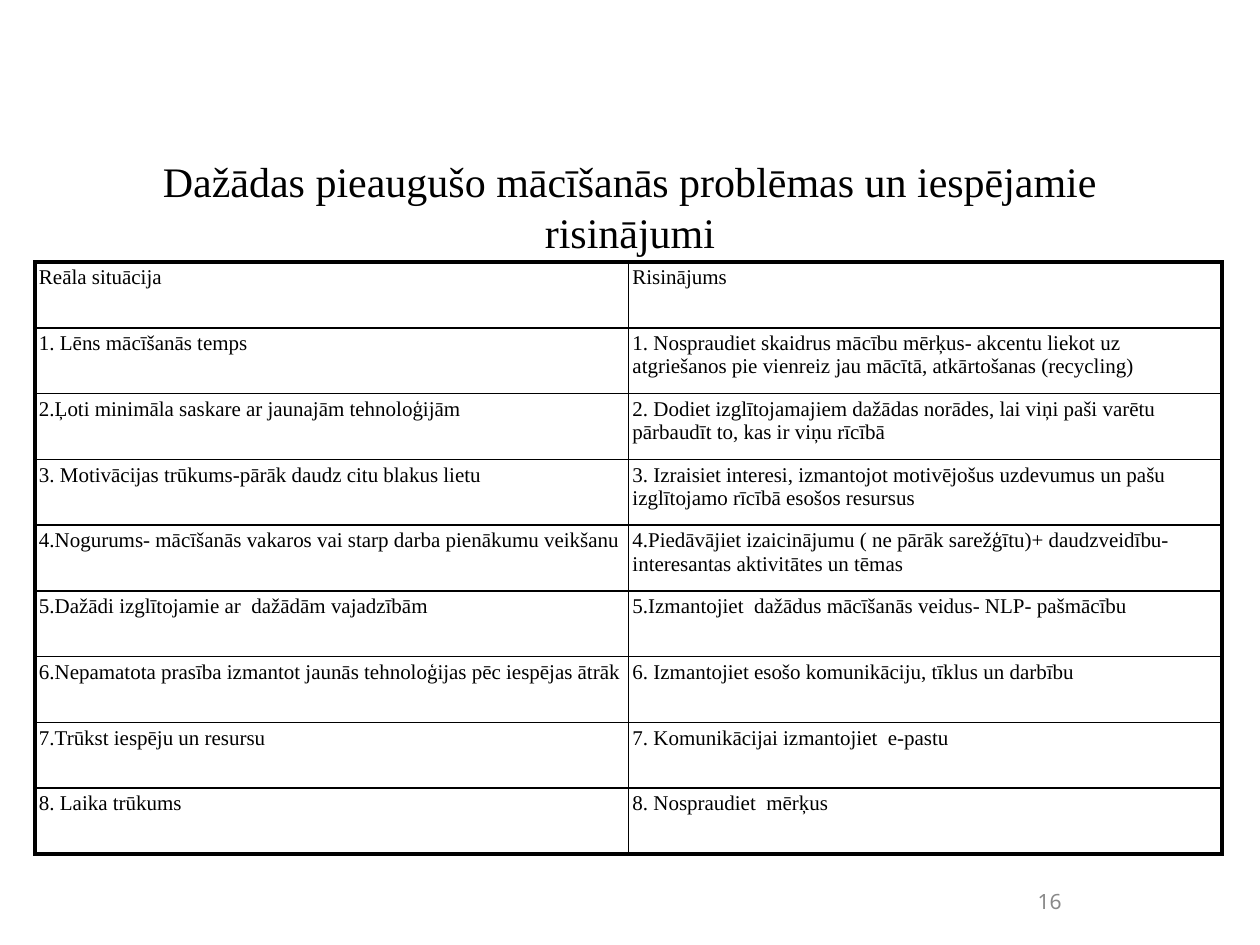
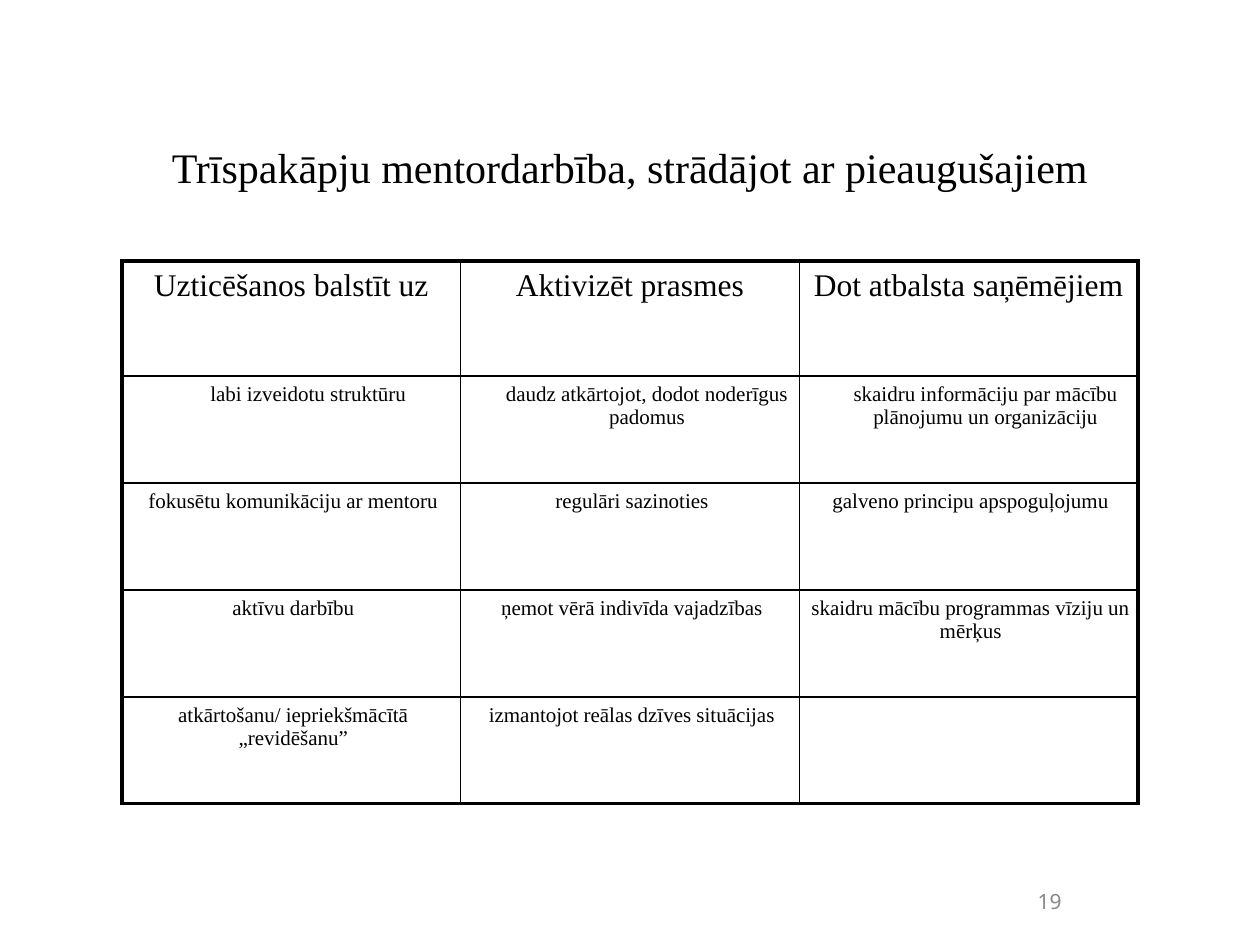
from lxml import etree
from pptx import Presentation
from pptx.dml.color import RGBColor
from pptx.enum.text import MSO_ANCHOR, MSO_AUTO_SIZE, PP_ALIGN
from pptx.oxml.ns import qn
from pptx.util import Emu, Pt

PX_PER_INCH = 126
COLORS = {"ink": "000000", "number": "898989"}
SERIF, SANS = "Times New Roman", "Noto Sans"
LEFT, CENTER = PP_ALIGN.LEFT, PP_ALIGN.CENTER
TOP, MIDDLE = MSO_ANCHOR.TOP, MSO_ANCHOR.MIDDLE
NO_AUTOFIT = MSO_AUTO_SIZE.NONE
OUTER, INNER = 2.25, 1
TITLE_ONLY = 5

PROBLEMS = [
    ("Reāla situācija", "Risinājums"),
    ("1. Lēns mācīšanās temps",
     "1. Nospraudiet skaidrus mācību mērķus- akcentu liekot uz atgriešanos pie "
     "vienreiz jau mācītā, atkārtošanas (recycling)"),
    ("2.Ļoti minimāla saskare ar jaunajām tehnoloģijām",
     "2. Dodiet izglītojamajiem dažādas norādes, lai viņi paši varētu pārbaudīt to, "
     "kas ir viņu rīcībā"),
    ("3. Motivācijas trūkums-pārāk daudz citu blakus lietu",
     "3. Izraisiet interesi, izmantojot motivējošus uzdevumus un pašu izglītojamo "
     "rīcībā esošos resursus"),
    ("4.Nogurums- mācīšanās vakaros vai starp darba pienākumu veikšanu",
     "4.Piedāvājiet izaicinājumu ( ne pārāk sarežģītu)+ daudzveidību- interesantas "
     "aktivitātes un tēmas"),
    ("5.Dažādi izglītojamie ar  dažādām vajadzībām",
     "5.Izmantojiet  dažādus mācīšanās veidus- NLP- pašmācību"),
    ("6.Nepamatota prasība izmantot jaunās tehnoloģijas pēc iespējas ātrāk",
     "6. Izmantojiet esošo komunikāciju, tīklus un darbību"),
    ("7.Trūkst iespēju un resursu", "7. Komunikācijai izmantojiet  e-pastu"),
    ("8. Laika trūkums", "8. Nospraudiet  mērķus"),
]
MENTORING = [
    ("Uzticēšanos balstīt uz", "Aktivizēt prasmes", "Dot atbalsta saņēmējiem"),
    ("labi izveidotu struktūru", "daudz atkārtojot, dodot noderīgus padomus",
     "skaidru informāciju par mācību plānojumu un organizāciju"),
    ("fokusētu komunikāciju ar mentoru", "regulāri sazinoties",
     "galveno principu apspoguļojumu"),
    ("aktīvu darbību", "ņemot vērā indivīda vajadzības",
     "skaidru mācību programmas vīziju un mērķus"),
    ("atkārtošanu/ iepriekšmācītā „revidēšanu”",
     "izmantojot reālas dzīves situācijas", ""),
]


def px(n):
    """Turn pixels into EMU."""
    return Emu(round(n * 914400 / PX_PER_INCH))


def style(p, size, font=SERIF, color="ink", align=CENTER):
    """Format one paragraph."""
    p.alignment = align
    p.font.size = Pt(size)
    p.font.name = font
    p.font.color.rgb = RGBColor.from_string(COLORS[color])


def set_margins(target, margin):
    """Give a text frame or cell the same margin on all sides."""
    target.margin_left = target.margin_right = px(margin)
    target.margin_top = target.margin_bottom = px(margin)


def add_title(s, text, box):
    """Move and format the title placeholder."""
    sp = s.shapes.title
    sp.left, sp.top, sp.width, sp.height = map(px, box)
    tf = sp.text_frame
    tf.text = text
    tf.word_wrap, tf.auto_size, tf.vertical_anchor = True, NO_AUTOFIT, TOP
    set_margins(tf, 0)
    p = tf.paragraphs[0]
    p.line_spacing = Pt(29)
    style(p, 24)


def add_page_number(s, number):
    """Write the page number in the footer."""
    tf = s.shapes.add_textbox(*map(px, (1028, 881, 43, 40))).text_frame
    tf.text = str(number)
    tf.word_wrap, tf.auto_size, tf.vertical_anchor = False, NO_AUTOFIT, MIDDLE
    set_margins(tf, 0)
    style(tf.paragraphs[0], 12, SANS, "number")


def set_borders(cell, widths):
    """Draw the left, right, top and bottom borders of a cell."""
    tc_pr = cell._tc.get_or_add_tcPr()
    for side, width in zip("LRTB", widths):
        ln = etree.SubElement(tc_pr, qn(f"a:ln{side}"), w=str(Pt(width)))
        fill = etree.SubElement(ln, qn("a:solidFill"))
        etree.SubElement(fill, qn("a:srgbClr"), val=COLORS["ink"])


def add_grid(s, rows, box, header_height, margin, header_size=12, align=LEFT, indents=None):
    """Add a ruled table with a thick frame, equal columns and equal body rows."""
    x, y, w, h = box
    last_row, last_col = len(rows) - 1, len(rows[0]) - 1
    table = s.shapes.add_table(last_row + 1, last_col + 1, *map(px, box)).table
    table.first_row = table.horz_banding = False
    for column in table.columns:
        column.width = px(w / (last_col + 1))
    for i, texts in enumerate(rows):
        table.rows[i].height = px((h - header_height) / last_row if i else header_height)
        for j, text in enumerate(texts):
            cell = table.cell(i, j)
            cell.text = text
            set_margins(cell, margin)
            edges = (j == 0, j == last_col, i == 0, i == last_row)
            set_borders(cell, [OUTER if edge else INNER for edge in edges])
            cell.fill.background()
            p = cell.text_frame.paragraphs[0]
            if indents:
                p._p.get_or_add_pPr().set("marL", str(px(indents[i])))
            style(p, 12 if i else header_size, align=align)


def add_table_slide(prs, title, title_box, number, rows, box, **look):
    """Add a slide with a title, a table and a page number."""
    s = prs.slides.add_slide(prs.slide_layouts[TITLE_ONLY])
    add_page_number(s, number)
    add_title(s, title, title_box)
    add_grid(s, rows, box, **look)


def main():
    """Build the two slides."""
    prs = Presentation()
    prs.slide_width, prs.slide_height = px(1260), px(945)
    add_table_slide(
        prs, "Dažādas pieaugušo mācīšanās problēmas un iespējamie risinājumi",
        (112, 155, 1036, 144), 16, PROBLEMS, (35, 262, 1187, 592),
        header_height=66, margin=4)
    add_table_slide(
        prs, "Trīspakāpju mentordarbība, strādājot ar pieaugušajiem",
        (121, 141, 1018, 156), 19, MENTORING, (122, 261, 1016, 543),
        header_height=115, margin=7, header_size=18, align=CENTER,
        indents=(0, 34, 4, 4, 4))
    prs.save("out.pptx")


if __name__ == "__main__":
    main()
